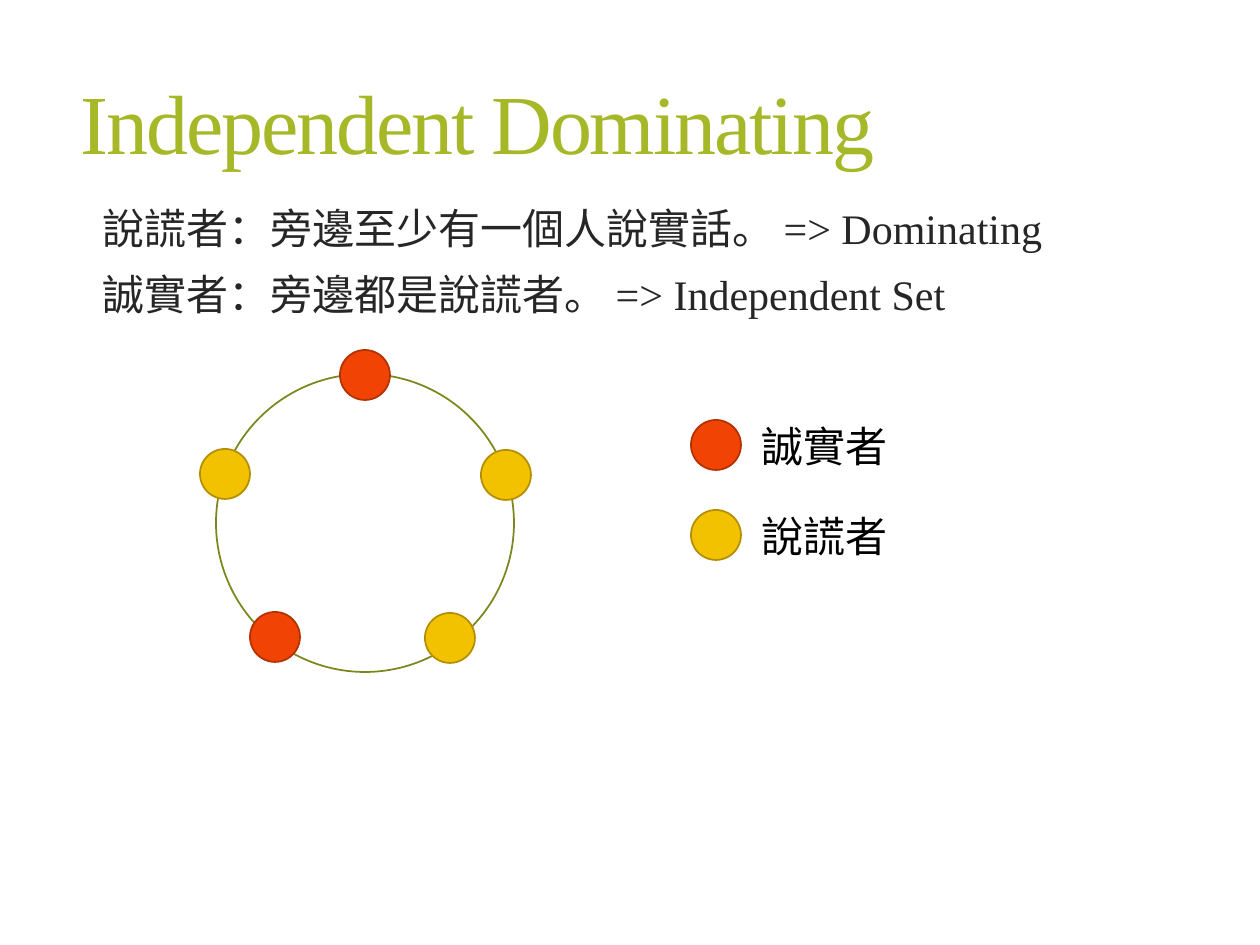
import dataclasses

import pptx
import pptx.dml.color
import pptx.enum.shapes
import pptx.enum.text
import pptx.oxml.ns
import pptx.util
from lxml import etree

PX = 914400 / 126


@dataclasses.dataclass(frozen=True)
class Theme:
    latin: str = "Times New Roman"
    cjk: str = "Noto Sans CJK SC"
    title: str = "A6B727"
    body: str = "262626"
    label: str = "000000"
    ring: str = "7B871D"
    honest: tuple = ("F04304", "B23203")
    liar: tuple = ("F2C100", "B38F00")
    title_size: int = 48
    text_size: int = 24
    line_width: int = 1
    dot: int = 50


THEME = Theme()


def emu(*lengths):
    return [round(n * PX) for n in lengths]


def rgb(value):
    return pptx.dml.color.RGBColor.from_string(value)


def style_run(r, size, color, font):
    r.font.size = pptx.util.Pt(size)
    r.font.color.rgb = rgb(color)
    r.font.name = font
    ea = etree.SubElement(r._r.get_or_add_rPr(), pptx.oxml.ns.qn("a:ea"))
    ea.set("typeface", THEME.cjk)


def add_circle(shapes, cx, cy, diameter, line, fill=None):
    box = emu(cx - diameter / 2, cy - diameter / 2, diameter, diameter)
    sp = shapes.add_shape(pptx.enum.shapes.MSO_SHAPE.OVAL, *box)
    sp.shadow.inherit = False
    sp.line.color.rgb = rgb(line)
    sp.line.width = pptx.util.Pt(THEME.line_width)
    if fill:
        sp.fill.solid()
        sp.fill.fore_color.rgb = rgb(fill)
    else:
        sp.fill.background()


def add_person(shapes, cx, cy, colors):
    fill, line = colors
    add_circle(shapes, cx, cy, THEME.dot, line, fill)


def place_title(s, box, text):
    sp = s.shapes.title
    sp.left, sp.top, sp.width, sp.height = emu(*box)
    tf = sp.text_frame
    tf.text = text
    tf.vertical_anchor = pptx.enum.text.MSO_ANCHOR.MIDDLE
    p = tf.paragraphs[0]
    p.alignment = pptx.enum.text.PP_ALIGN.LEFT
    p.line_spacing = 0.9
    r = p.runs[0]
    style_run(r, THEME.title_size, THEME.title, THEME.latin)
    r._r.get_or_add_rPr().set("spc", "-120")


def place_statements(s, box, lines):
    tf = s.shapes.add_textbox(*emu(*box)).text_frame
    tf.word_wrap = True
    tf.text = "\n".join(lines)
    indent = pptx.util.Inches(0.1)
    for p in tf.paragraphs:
        p.line_spacing = 0.85
        p.space_before = pptx.util.Pt(13)
        pPr = p._p.get_or_add_pPr()
        pPr.set("marL", str(indent))
        pPr.set("indent", str(-indent))
        etree.SubElement(pPr, pptx.oxml.ns.qn("a:buChar")).set("char", " ")
        style_run(p.runs[0], THEME.text_size, THEME.body, THEME.latin)


def place_ring(s, box, people):
    x, y, size = box
    add_circle(s.shapes, x + size / 2, y + size / 2, size, THEME.ring)
    for dx, dy, colors in people:
        add_person(s.shapes, x + dx, y + dy, colors)


def place_legend(s, box, entries):
    x, y, width, pitch = box
    label_left, label_height = 58, 63
    for i, (text, colors) in enumerate(entries):
        group = s.shapes.add_group_shape()
        top = y + i * pitch
        add_person(group.shapes, x + THEME.dot / 2, top + 31, colors)
        label = group.shapes.add_textbox(
            *emu(x + label_left, top, width - label_left, label_height))
        tf = label.text_frame
        tf.word_wrap = False
        tf.text = text
        style_run(tf.paragraphs[0].runs[0], THEME.text_size, THEME.label, THEME.cjk)


def main():
    prs = pptx.Presentation()
    prs.slide_width, prs.slide_height = emu(1260, 945)
    s = prs.slides.add_slide(prs.slide_layouts[5])
    place_title(s, (68, 69, 1114, 116), "Independent Dominating")
    place_statements(s, (69, 204, 1111, 672), [
        "說謊者：旁邊至少有一個人說實話。 => Dominating",
        "誠實者：旁邊都是說謊者。 => Independent Set",
    ])
    place_ring(s, (216, 374, 298), [
        (149, 1, THEME.honest),
        (59, 263, THEME.honest),
        (9, 100, THEME.liar),
        (290, 101, THEME.liar),
        (234, 264, THEME.liar),
    ])
    place_legend(s, (691, 414, 211, 90), [
        ("誠實者", THEME.honest),
        ("說謊者", THEME.liar),
    ])
    prs.save("out.pptx")


if __name__ == "__main__":
    main()
